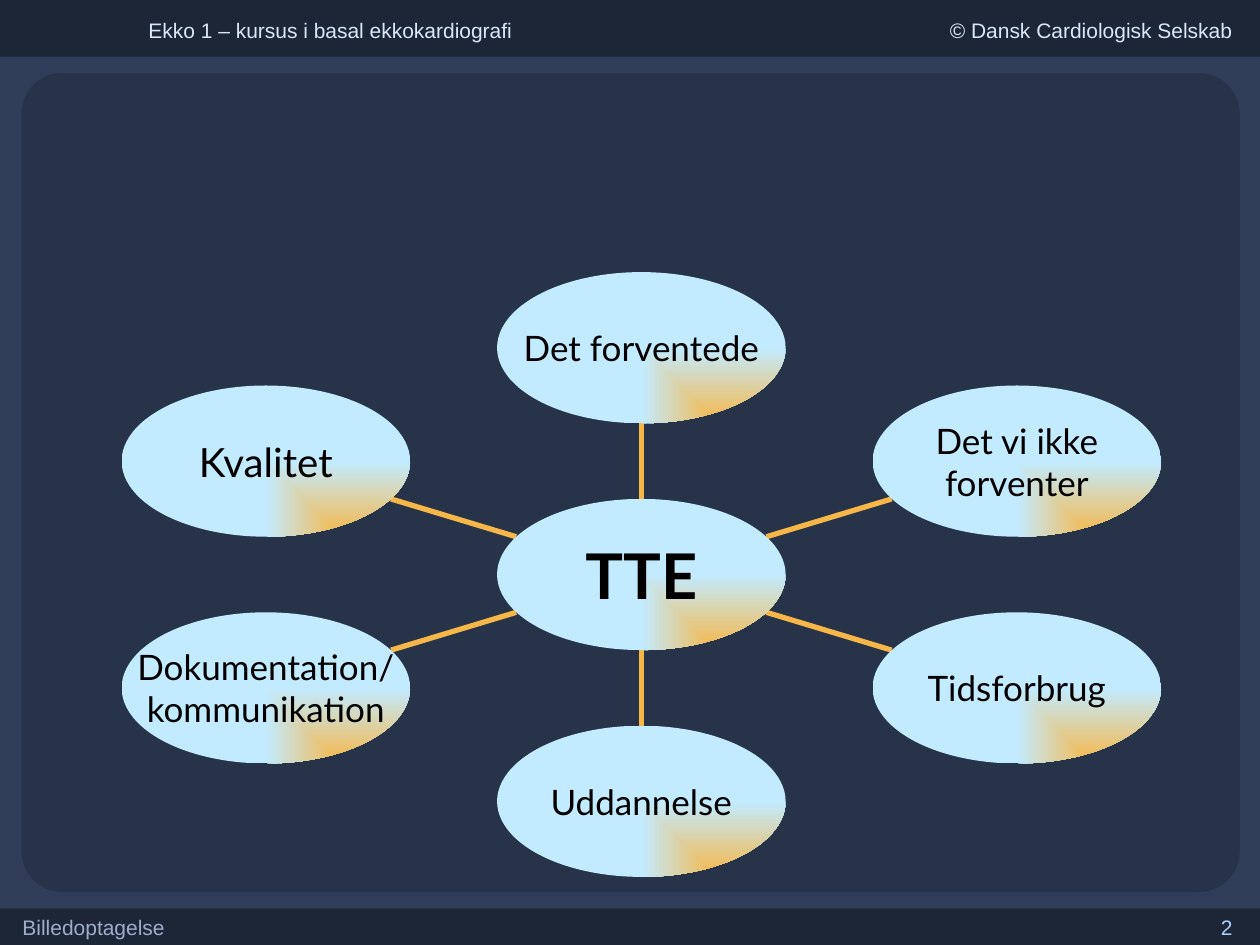
from pptx import Presentation
from pptx.dml.color import RGBColor
from pptx.enum.shapes import MSO_CONNECTOR, MSO_SHAPE
from pptx.enum.text import MSO_ANCHOR, MSO_AUTO_SIZE, PP_ALIGN
from pptx.oxml import parse_xml
from pptx.oxml.ns import nsdecls
from pptx.oxml.xmlchemy import OxmlElement
from pptx.util import Inches, Pt

HEX = {
    "back": "2F3D58", "bar": "1D2637", "panel": "273349",
    "head": "D8E8FA", "page": "AFD0F5", "foot": "9DADCB",
    "gold": "F7B748", "sky": "C2EBFF", "ink": "000000",
}
COLOR = {name: RGBColor.from_string(code) for name, code in HEX.items()}
GLOW = f"""<a:gradFill {nsdecls("a")} rotWithShape="0"><a:gsLst>
<a:gs pos="0"><a:srgbClr val="{HEX["gold"]}"/></a:gs>
<a:gs pos="100000"><a:srgbClr val="{HEX["sky"]}"/></a:gs></a:gsLst>
<a:path path="rect"><a:fillToRect l="100000" t="100000"/></a:path></a:gradFill>"""


def add_shape(kind, *box):
    shape = slide.shapes.add_shape(kind, *map(Inches, box))
    shape.shadow.inherit = False
    shape.line.fill.background()
    return shape


def add_run(para, text, size, font, color, bold=False):
    run = para.add_run()
    run.text = text
    run.font.size = Pt(size)
    run.font.name = font
    run.font.bold = bold
    run.font.color.rgb = COLOR[color]


deck = Presentation()
deck.slide_width, deck.slide_height = Inches(10), Inches(7.5)
slide = deck.slides.add_slide(deck.slide_layouts[6])
slide.background.fill.solid()
slide.background.fill.fore_color.rgb = COLOR["back"]

# Bars and rounded panel
for kind, color, box in [
    (MSO_SHAPE.RECTANGLE, "bar", (0, 7.21, 10, 0.29)),
    (MSO_SHAPE.RECTANGLE, "bar", (0, 0, 10, 0.45)),
    (MSO_SHAPE.ROUNDED_RECTANGLE, "panel", (0.17, 0.58, 9.67, 6.5)),
]:
    shape = add_shape(kind, *box)
    shape.fill.solid()
    shape.fill.fore_color.rgb = COLOR[color]
shape.adjustments[0] = 0.05

# Header and footer text
left, right = PP_ALIGN.LEFT, PP_ALIGN.RIGHT
fixed, grow = MSO_AUTO_SIZE.NONE, MSO_AUTO_SIZE.SHAPE_TO_FIT_TEXT
for text, color, align, fit, box in [
    ("Ekko 1 – kursus i basal ekkokardiografi", "head", left, grow, (1.08, 0.09, 3.75, 0.3)),
    ("© Dansk Cardiologisk Selskab", "head", right, grow, (6.89, 0.09, 2.99, 0.3)),
    ("2", "page", right, fixed, (7.55, 7.21, 2.33, 0.25)),
    ("Billedoptagelse", "foot", left, fixed, (0.08, 7.21, 3.17, 0.25)),
]:
    frame = slide.shapes.add_textbox(*map(Inches, box)).text_frame
    frame.word_wrap = True
    frame.auto_size = fit
    frame.paragraphs[0].alignment = align
    add_run(frame.paragraphs[0], text, 12, "Arial", color)

# Hub and spokes: each node sits at an offset from the hub, in grid steps
MID_X, MID_Y = 5.09, 4.56
STEP_X, STEP_Y = 2.98, 0.9
WIDE, HIGH = 2.29, 1.2
for lines, size, col, row, wrap in [
    (["Kvalitet"], 23, -1, -1, False),
    (["Dokumentation/", "kommunikation"], 20, -1, 1, False),
    (["Uddannelse"], 20, 0, 2, False),
    (["Tidsforbrug"], 20, 1, 1, False),
    (["Det vi ikke forventer"], 20, 1, -1, True),
    (["Det forventede"], 20, 0, -2, False),
    (["TTE"], 36, 0, 0, False),
]:
    dx, dy = col * STEP_X, row * STEP_Y
    hub = (col, row) == (0, 0)

    # The spoke fills the middle third of the way out
    if not hub:
        ends = (MID_X + dx / 3, MID_Y + dy / 3, MID_X + dx * 2 / 3, MID_Y + dy * 2 / 3)
        spoke = slide.shapes.add_connector(MSO_CONNECTOR.STRAIGHT, *map(Inches, ends))
        spoke.line.color.rgb = COLOR["gold"]
        spoke.line.width = Pt(3)
        spoke._element.spPr.append(OxmlElement("a:effectLst"))

    node = add_shape(MSO_SHAPE.OVAL, MID_X + dx - WIDE / 2, MID_Y + dy - HIGH / 2, WIDE, HIGH)
    node._element.spPr.insert(2, parse_xml(GLOW))
    frame = node.text_frame
    frame.word_wrap = wrap
    frame.vertical_anchor = MSO_ANCHOR.MIDDLE
    frame.margin_left = frame.margin_right = frame.margin_top = frame.margin_bottom = 0
    for i, line in enumerate(lines):
        para = frame.add_paragraph() if i else frame.paragraphs[0]
        para.alignment = PP_ALIGN.CENTER
        add_run(para, line, size, "Lato", "ink", hub)

deck.save("out.pptx")
